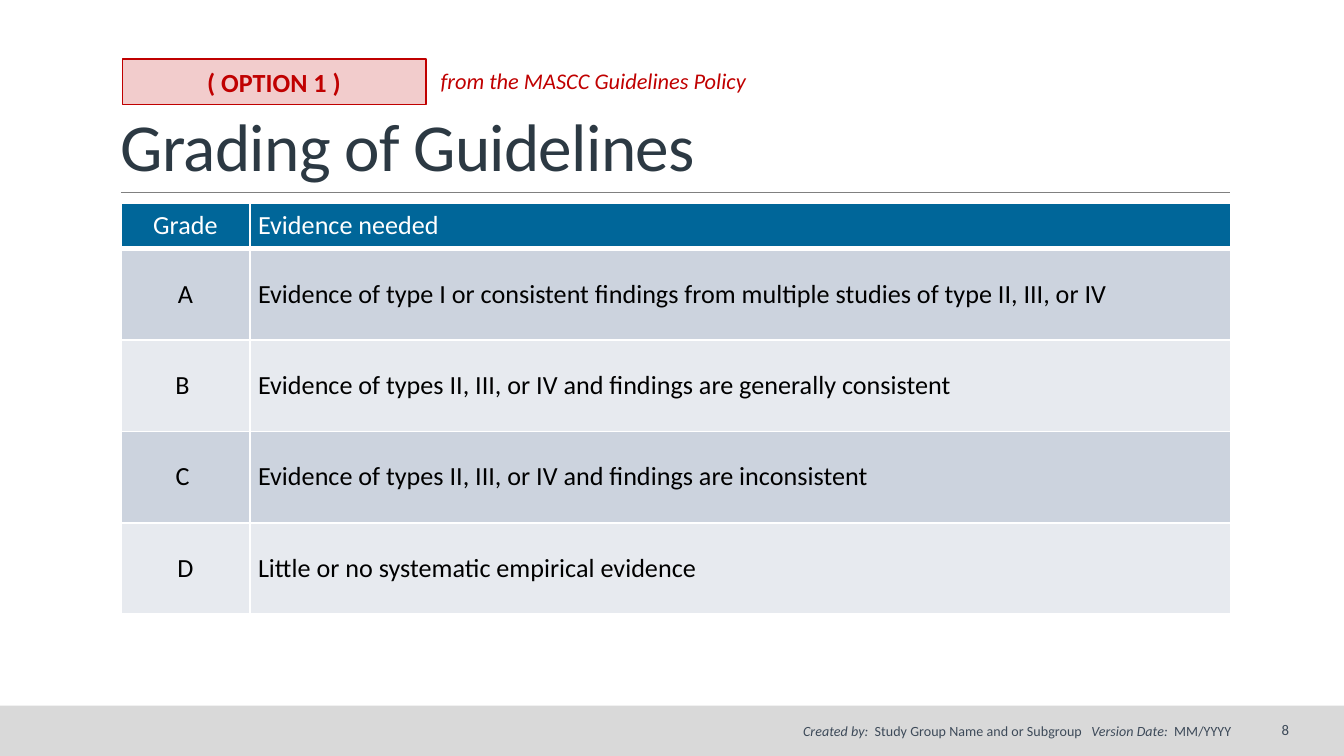
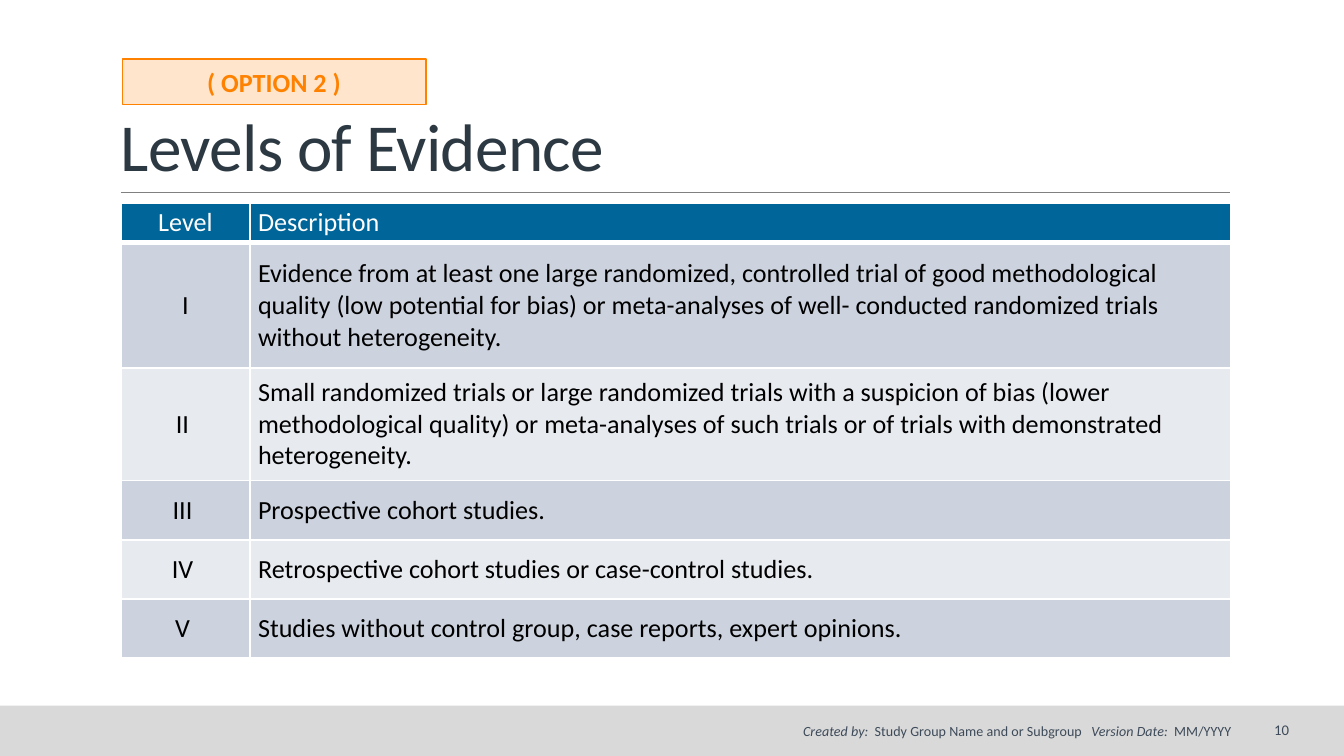
from lxml.etree import SubElement
from pptx import Presentation
from pptx.dml.color import RGBColor
from pptx.enum.shapes import MSO_CONNECTOR as CONN, MSO_SHAPE as SHAPE
from pptx.enum.text import MSO_ANCHOR as ANCHOR, MSO_AUTO_SIZE as AUTO, PP_ALIGN as ALIGN
from pptx.oxml.ns import qn
from pptx.util import Inches, Pt

FONT = "Calibri"
COLORS = {
    "white": "FFFFFF", "black": "000000", "title": "2C3943", "footer": "3D4A59",
    "band": "D9D9D9", "rule": "808080", "header": "006699",
    "odd": "CCD3DE", "even": "E7EAEF", "red": "C00000", "orange": "FF8100",
}
LEFT, RIGHT = 0.9, 9.15
COLUMNS = (0.96, 7.3)

GRADES = [
    ("Grade", "Evidence needed"),
    ("A", "Evidence of type I or consistent findings from multiple studies of type II, III, or IV"),
    ("B ", "Evidence of types II, III, or IV and findings are generally consistent"),
    ("C ", "Evidence of types II, III, or IV and findings are inconsistent"),
    ("D", "Little or no systematic empirical evidence"),
]
LEVELS = [
    ("Level", "Description"),
    ("I", "Evidence from at least one large randomized, controlled trial of good methodological "
          "quality (low potential for bias) or meta-analyses of well- conducted randomized trials "
          "without heterogeneity."),
    ("II ", "Small randomized trials or large randomized trials with a suspicion of bias (lower "
            "methodological quality) or meta-analyses of such trials or of trials with "
            "demonstrated heterogeneity."),
    ("III ", "Prospective cohort studies."),
    ("IV ", "Retrospective cohort studies or case-control studies."),
    ("V ", "Studies without control group, case reports, expert opinions."),
]


def rgb(name):
    return RGBColor.from_string(COLORS[name])


def add_text(p, text, size=14, color="black", bold=False, italic=False,
             align=ALIGN.LEFT, spacing=None):
    """Add a run; spacing is the extra space between letters in points."""
    p.alignment = align
    r = p.add_run()
    r.text = text
    f = r.font
    f.name, f.size, f.bold, f.italic = FONT, Pt(size), bold, italic
    f.color.rgb = rgb(color)
    if spacing:
        r._r.get_or_add_rPr().set("spc", str(round(spacing * 100)))


def add_box(s, x, y, w, h, anchor=ANCHOR.TOP, side=0.1, auto=AUTO.NONE):
    tf = s.shapes.add_textbox(*map(Inches, (x, y, w, h))).text_frame
    tf.word_wrap = True
    tf.auto_size = auto
    tf.vertical_anchor = anchor
    tf.margin_left = tf.margin_right = Inches(side)
    return tf.paragraphs[0]


def add_rect(s, x, y, w, h, color, alpha=None, line=None):
    sp = s.shapes.add_shape(SHAPE.RECTANGLE, *map(Inches, (x, y, w, h)))
    sp.shadow.inherit = False
    sp.fill.solid()
    sp.fill.fore_color.rgb = rgb(color)
    if alpha:
        clr = sp.fill._xPr.find(qn("a:solidFill"))[0]
        SubElement(clr, qn("a:alpha"), val=str(alpha * 1000))
    if line:
        sp.line.color.rgb = rgb(color)
        sp.line.width = Pt(line)
    else:
        sp.line.fill.background()
    return sp


def add_footer(s, number):
    p = add_box(s, 9.06, 5.28, 0.63, 0.3, ANCHOR.MIDDLE)
    add_text(p, str(number), 7.9, "footer", align=ALIGN.RIGHT)
    p = add_box(s, 4.33, 5.33, 4.93, 0.3)
    # Each part is followed by one space, widened by the given points
    for text, italic, gap in (("Created by:", True, 1.7),
                              ("Study Group Name and or Subgroup", False, 3.4),
                              ("Version Date:", True, 1.7),
                              ("MM/YYYY", False, None)):
        style = dict(size=7.5, color="footer", italic=italic, align=ALIGN.RIGHT)
        add_text(p, text, **style)
        if gap:
            add_text(p, " ", spacing=gap, **style)


def add_frame(prs, title, number):
    """Start a slide with the shared band, rule, title and footer."""
    s = prs.slides.add_slide(prs.slide_layouts[6])
    add_rect(s, 0, 5.25, 10, 0.38, "band")
    rule = s.shapes.add_connector(CONN.STRAIGHT, *map(Inches, (LEFT, 1.43, RIGHT, 1.43)))
    rule.line.color.rgb = rgb("rule")
    rule.line.width = Pt(0.5)
    SubElement(rule._element.spPr, qn("a:effectLst"))
    p = add_box(s, LEFT, 0.24, RIGHT - LEFT, 1.19, ANCHOR.BOTTOM, side=0)
    p.line_spacing = 0.85
    add_text(p, title, 36, "title", spacing=-0.4)
    add_footer(s, number)
    return s


def add_option(s, label, color):
    sp = add_rect(s, 0.91, 0.44, 2.26, 0.34, color, alpha=20, line=0.75)
    tf = sp.text_frame
    tf.word_wrap = True
    tf.auto_size = AUTO.SHAPE_TO_FIT_TEXT
    tf.vertical_anchor = ANCHOR.MIDDLE
    add_text(tf.paragraphs[0], label, color=color, bold=True, align=ALIGN.CENTER)


def set_borders(cell, bottom):
    tc_pr = cell._tc.get_or_add_tcPr()
    for side, width in (("L", 1), ("R", 1), ("T", 1), ("B", bottom)):
        ln = SubElement(tc_pr, qn("a:ln" + side), w=str(Pt(width)))
        fill = SubElement(ln, qn("a:solidFill"))
        SubElement(fill, qn("a:srgbClr"), val=COLORS["white"])


def add_table(s, rows, heights):
    frame = s.shapes.add_table(len(rows), len(COLUMNS), Inches(LEFT), Inches(1.51),
                               Inches(sum(COLUMNS)), Inches(sum(heights)))
    table = frame.table
    for col, width in zip(table.columns, COLUMNS):
        col.width = Inches(width)
    for i, (texts, height) in enumerate(zip(rows, heights)):
        table.rows[i].height = Inches(height)
        fill = "header" if i == 0 else "odd" if i % 2 else "even"
        for j, text in enumerate(texts):
            cell = table.cell(i, j)
            set_borders(cell, bottom=1 if i else 3)
            cell.fill.solid()
            cell.fill.fore_color.rgb = rgb(fill)
            cell.vertical_anchor = ANCHOR.MIDDLE
            cell.margin_left = cell.margin_right = Inches(0.06)
            cell.margin_top = cell.margin_bottom = Inches(0.03)
            add_text(cell.text_frame.paragraphs[0], text,
                     color="black" if i else "white",
                     align=ALIGN.LEFT if j else ALIGN.CENTER)


def main():
    prs = Presentation()
    prs.slide_width, prs.slide_height = Inches(10), Inches(5.625)

    # Grading of guidelines
    s = add_frame(prs, "Grading of Guidelines", 8)
    add_table(s, GRADES, [0.34] + [0.68] * 4)
    add_option(s, "( OPTION 1 )", "red")
    p = add_box(s, 3.18, 0.45, 2.87, 0.3, auto=AUTO.SHAPE_TO_FIT_TEXT)
    add_text(p, "from the MASCC Guidelines Policy", 12, "red", italic=True)

    # Levels of evidence
    s = add_frame(prs, "Levels of Evidence", 10)
    add_table(s, LEVELS, [0.29, 0.93, 0.84] + [0.44] * 3)
    add_option(s, "( OPTION 2 )", "orange")

    prs.save("out.pptx")


if __name__ == "__main__":
    main()
